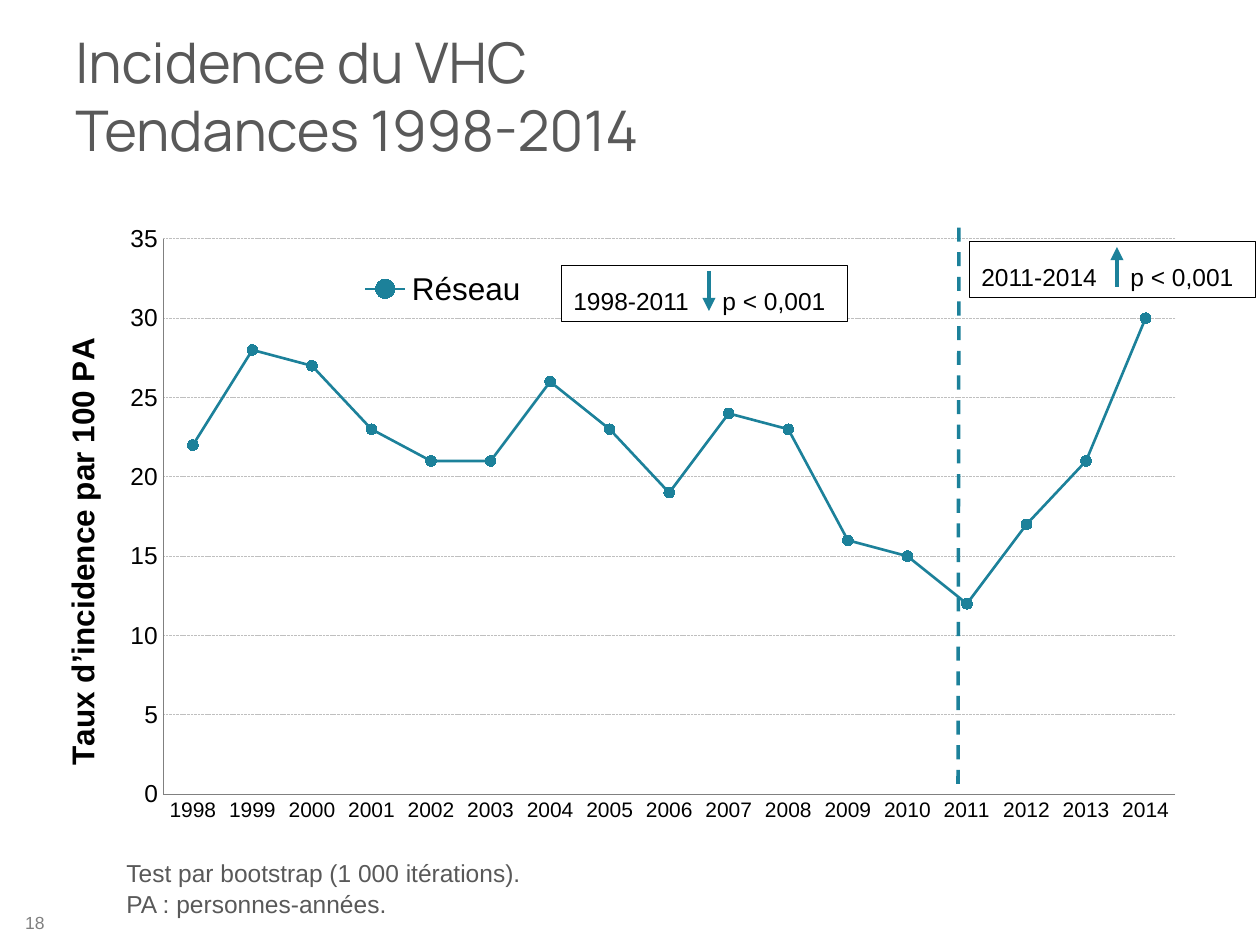
from lxml import etree
from pptx import Presentation
from pptx import util as u
from pptx.chart.data import CategoryChartData
from pptx.dml.color import RGBColor
from pptx.enum import chart as charts, dml, shapes, text
from pptx.oxml import parse_xml
from pptx.oxml.ns import nsdecls, qn

PX = u.Inches(1) / 126
TEAL = RGBColor(0x1C, 0x81, 0x9A)
BLACK = RGBColor(0, 0, 0)
WHITE = RGBColor(255, 255, 255)
DARK_GREY = RGBColor(0x59, 0x59, 0x59)
MID_GREY = RGBColor(0x80, 0x80, 0x80)
LIGHT_GREY = RGBColor(0xBF, 0xBF, 0xBF)

YEARS = [str(year) for year in range(1998, 2015)]
RATES = [22, 28, 27, 23, 21, 21, 26, 23, 19, 24, 23, 16, 15, 12, 17, 21, 30]


def px(length):
    return u.Emu(round(length * PX))


def scale_box(box):
    return [px(length) for length in box]


def set_font(font, size, color, name="Arial", bold=False):
    font.name, font.size, font.bold = name, u.Pt(size), bold
    font.color.rgb = color


def add_text(slide, box, lines, size, color, name="Arial", align=text.PP_ALIGN.LEFT,
             anchor=text.MSO_ANCHOR.TOP, gap=0):
    frame = slide.shapes.add_textbox(*scale_box(box)).text_frame
    frame.word_wrap = True
    frame.vertical_anchor = anchor
    for index, line in enumerate(lines):
        paragraph = frame.add_paragraph() if index else frame.paragraphs[0]
        paragraph.text = line
        paragraph.alignment = align
        if index:
            paragraph.space_before = u.Pt(gap)
        set_font(paragraph.font, size, color, name)


def add_line(slide, start, end, width, dash=None, arrow=False):
    line = slide.shapes.add_connector(
        shapes.MSO_CONNECTOR.STRAIGHT, *scale_box(start), *scale_box(end))
    line.line.color.rgb = TEAL
    line.line.width = u.Pt(width)
    if dash:
        line.line.dash_style = dash
    if arrow:
        etree.SubElement(line.line._get_or_add_ln(), qn("a:tailEnd"), type="triangle")
    etree.SubElement(line._element.spPr, qn("a:effectLst"))


def add_trend(slide, box, period, upward):
    """Framed period and p value, with an arrow for the direction between them."""
    left, top, width, height = box
    frame = slide.shapes.add_shape(shapes.MSO_SHAPE.RECTANGLE, *scale_box(box))
    frame.shadow.inherit = False
    frame.fill.solid()
    frame.fill.fore_color.rgb = WHITE
    frame.line.color.rgb = BLACK
    frame.line.width = u.Pt(0.5)
    frame.text_frame.word_wrap = True
    frame.text_frame.vertical_anchor = text.MSO_ANCHOR.TOP
    paragraph = frame.text_frame.paragraphs[0]
    paragraph.text = f"{period}\tp < 0,001"
    paragraph.alignment = text.PP_ALIGN.LEFT
    paragraph.line_spacing = 1.5
    tabs = etree.SubElement(paragraph._p.get_or_add_pPr(), qn("a:tabLst"))
    etree.SubElement(tabs, qn("a:tab"), pos=str(px(149)), algn="l")
    set_font(paragraph.font, 14, BLACK)
    x = left + 148
    ends = [(x, top + 6), (x, top + 46)]
    if upward:
        ends.reverse()
    add_line(slide, *ends, 2.5, arrow=True)


def make_layout(x, y, width=None, height=None, inner=False):
    """Manual chart layout in fractions of the chart area."""
    parts = '<c:layoutTarget val="inner"/>' if inner else ""
    parts += '<c:xMode val="edge"/><c:yMode val="edge"/>'
    for tag, value in (("x", x), ("y", y), ("w", width), ("h", height)):
        if value is not None:
            parts += f'<c:{tag} val="{value}"/>'
    return parse_xml(
        f'<c:layout {nsdecls("c")}><c:manualLayout>{parts}</c:manualLayout></c:layout>')


def set_layout(element, layout, after=None):
    for old in element.findall(qn("c:layout")):
        element.remove(old)
    if after is None:
        element.insert(0, layout)
    else:
        element.find(qn(after)).addnext(layout)


def style_axis(axis, size):
    axis.major_tick_mark = axis.minor_tick_mark = charts.XL_TICK_MARK.NONE
    axis.format.line.color.rgb = MID_GREY
    axis.format.line.width = u.Pt(0.5)
    set_font(axis.tick_labels.font, size, BLACK)


def add_incidence_chart(slide, box):
    data = CategoryChartData(number_format="0")
    data.categories = YEARS
    data.add_series("Réseau", RATES)
    chart = slide.shapes.add_chart(
        charts.XL_CHART_TYPE.LINE_MARKERS, *scale_box(box), data).chart
    set_font(chart.font, 18, BLACK, "Calibri")
    chart.has_title = False
    set_layout(chart.plots[0]._element.getparent(),
               make_layout(0.1, 0.04, 0.85, 0.89, inner=True))

    style_axis(chart.category_axis, 12)
    rates = chart.value_axis
    style_axis(rates, 14)
    rates.minimum_scale, rates.maximum_scale, rates.major_unit = 0, 35, 5
    rates.tick_labels.number_format = "0"
    rates.tick_labels.number_format_is_linked = False
    grid = rates.major_gridlines.format.line
    grid.color.rgb = LIGHT_GREY
    grid.width = u.Pt(0.5)
    grid.dash_style = dml.MSO_LINE.SQUARE_DOT
    title = rates.axis_title
    title.text_frame.text = "Taux d’incidence par 100 PA"
    title.text_frame._txBody.bodyPr.set("rot", "-5400000")
    title.text_frame._txBody.bodyPr.set("vert", "horz")
    set_font(title.text_frame.paragraphs[0].font, 18, BLACK, bold=True)
    set_layout(title._element, make_layout(0.01, 0.19), after="c:tx")

    chart.has_legend = True
    legend = chart.legend
    legend.position = charts.XL_LEGEND_POSITION.RIGHT
    legend.include_in_layout = False
    set_font(legend.font, 18, BLACK)
    set_layout(legend._element, make_layout(0.26, 0.08, 0.15, 0.08), after="c:legendPos")

    chart.plots[0].vary_by_categories = False
    series = chart.plots[0].series[0]
    series.smooth = False
    series.format.line.color.rgb = TEAL
    series.format.line.width = u.Pt(1.5)
    series.marker.style = charts.XL_MARKER_STYLE.CIRCLE
    series.marker.size = 6
    series.marker.format.fill.solid()
    series.marker.format.fill.fore_color.rgb = TEAL
    series.marker.format.line.color.rgb = TEAL


def main():
    presentation = Presentation()
    presentation.slide_width, presentation.slide_height = px(1260), px(945)
    slide = presentation.slides.add_slide(presentation.slide_layouts[6])

    add_text(slide, (63, 16, 1134, 158), ["Incidence du VHC\vTendances 1998-2014"],
             32, DARK_GREY, "Manrope", anchor=text.MSO_ANCHOR.MIDDLE)
    add_incidence_chart(slide, (44, 214, 1191, 624))
    add_text(slide, (-3, 898, 60, 50), ["18"], 10, MID_GREY,
             align=text.PP_ALIGN.RIGHT, anchor=text.MSO_ANCHOR.MIDDLE)
    add_text(slide, (114, 852, 456, 72),
             ["Test par bootstrap (1 000 itérations).", "PA : personnes-années."],
             14, DARK_GREY, align=text.PP_ALIGN.JUSTIFY, gap=1)
    add_line(slide, (958, 784), (959, 224), 2, dash=dml.MSO_LINE.DASH)
    add_trend(slide, (561, 265, 287, 57), "1998-2011", upward=False)
    add_trend(slide, (969, 241, 287, 57), "2011-2014", upward=True)
    presentation.save("out.pptx")


if __name__ == "__main__":
    main()
